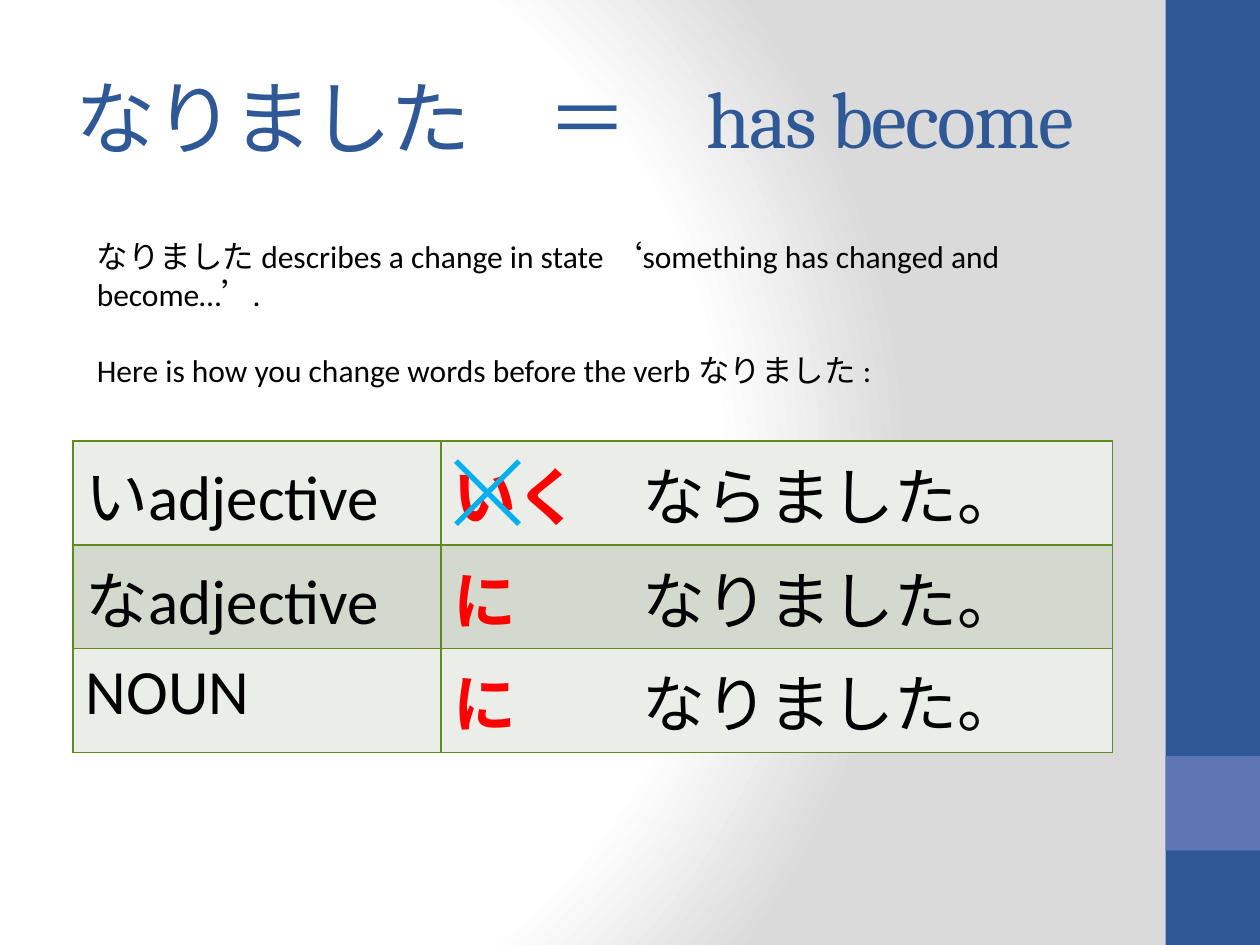
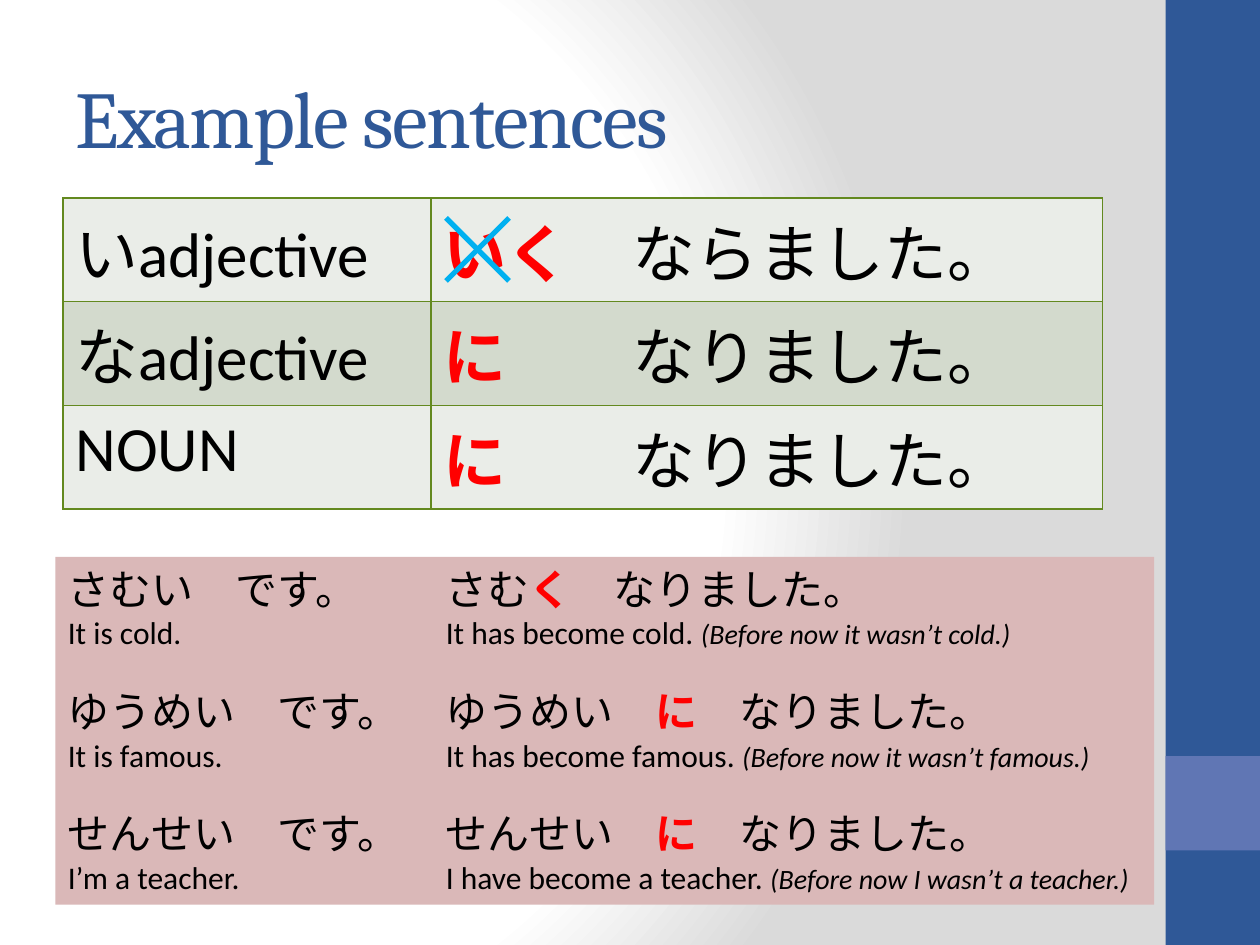
from lxml import etree
from pptx import Presentation
from pptx.dml.color import RGBColor
from pptx.enum import shapes, text
from pptx.oxml import parse_xml
from pptx.oxml.ns import nsdecls, qn
from pptx.util import Inches, Pt

BLUE, VIOLET, BLACK, RED, SKY = "2F5897", "6076B4", "000000", "FF0000", "00B0F0"
BORDER, PALE, SAGE, PINK = "63891F", "EAEDE8", "D3DACD", "DAB8B8"
HEAD_FONT, BODY_FONT = "Cambria", "Calibri"
TITLE_BOX = (0.5, 0.3, 8.33, 1.25)
COL_WIDTHS, ROW_HEIGHT = (2.92, 5.33), 0.82

RULES = [
    ("いadjective", "いく", "ならました。"),
    ("なadjective", "に", "なりました。"),
    ("NOUN", "に", "なりました。"),
]
INTRO = [
    "なりました describes a change in state ‘something has changed and become…’.",
    "Here is how you change words before the verb なりました :",
]
EXAMPLES = [
    ("さむい　です。", "さむ", "く", "It is cold.",
     "It has become cold. ", "(Before now it wasn’t cold.)"),
    ("ゆうめい　です。", "ゆうめい　", "に", "It is famous.",
     "It has become famous. ", "(Before now it wasn’t famous.)"),
    ("せんせい　です。", "せんせい　", "に", "I’m a teacher.",
     "I have become a teacher. ", "(Before now I wasn’t a teacher.)"),
]


def rgb(value):
    """Turn a hex string into a colour."""
    return RGBColor.from_string(value)


def set_font(font, size, color=BLACK, name=BODY_FONT):
    """Apply size, colour and typeface to a font."""
    font.size, font.name = Pt(size), name
    font.color.rgb = rgb(color)


def add_run(p, words, mark=False):
    """Add a run, bold and red when marked."""
    r = p.add_run()
    r.text = words
    if mark:
        r.font.bold = True
        r.font.color.rgb = rgb(RED)
    return r


def add_tab_stop(p, position):
    """Give a paragraph one left tab stop."""
    tabs = etree.SubElement(p._p.get_or_add_pPr(), qn("a:tabLst"))
    etree.SubElement(tabs, qn("a:tab"), pos=str(Inches(position)), algn="l")


def next_paragraph(tf, first):
    """Return the first paragraph of a frame or a new one."""
    return tf.paragraphs[0] if first else tf.add_paragraph()


def style_master(prs, slide):
    """Put the glow background and the side bands on the master."""
    master = prs.slide_master
    master.background.fill.gradient()
    old = master.element.find(".//" + qn("p:bgPr")).find(qn("a:gradFill"))
    stops = "".join(
        f'<a:gs pos="{pos * 1000}"><a:srgbClr val="{color}"/></a:gs>'
        for pos, color in ((0, "FFFFFF"), (75, "FFFFFF"), (100, "DADADA")))
    glow = parse_xml(
        f'<a:gradFill {nsdecls("a")} rotWithShape="1"><a:gsLst>{stops}</a:gsLst>'
        '<a:path path="circle"><a:fillToRect l="20000" t="50000" r="100000" b="50000"/>'
        '</a:path></a:gradFill>')
    old.getparent().replace(old, glow)
    for i, (top, height, color) in enumerate(((0, 7.5, BLUE), (6, 0.75, VIOLET))):
        sp = slide.shapes.add_shape(shapes.MSO_SHAPE.RECTANGLE, Inches(9.25), Inches(top),
                                    Inches(0.75), Inches(height))
        sp.shadow.inherit = False
        sp.fill.solid()
        sp.fill.fore_color.rgb = rgb(color)
        sp.line.fill.background()
        sp.element.nvSpPr.cNvPr.id = 20 + i
        master.element.cSld.spTree.insert(2 + i, sp.element)


def add_title(slide, words):
    """Fill and format the title placeholder."""
    sp = slide.shapes.title
    sp.left, sp.top, sp.width, sp.height = map(Inches, TITLE_BOX)
    tf = sp.text_frame
    tf.vertical_anchor = text.MSO_ANCHOR.MIDDLE
    tf.auto_size = text.MSO_AUTO_SIZE.NONE
    p = tf.paragraphs[0]
    p.alignment = text.PP_ALIGN.LEFT
    set_font(p.font, 46, BLUE, HEAD_FONT)
    add_run(p, words)._r.get_or_add_rPr().set("spc", "-100")


def style_cell(cell, fill):
    """Outline a cell on four sides and fill it."""
    tcPr = cell._tc.get_or_add_tcPr()
    for side in ("lnL", "lnR", "lnT", "lnB"):
        tcPr.append(parse_xml(
            f'<a:{side} {nsdecls("a")} w="{Pt(1)}"><a:solidFill>'
            f'<a:srgbClr val="{BORDER}"/></a:solidFill></a:{side}>'))
    cell.fill.solid()
    cell.fill.fore_color.rgb = rgb(fill)


def add_cross(slide, left, top, size=0.5):
    """Cross out a character with two diagonal lines."""
    for start, end in ((left, left + size), (left + size, left)):
        line = slide.shapes.add_connector(shapes.MSO_CONNECTOR.STRAIGHT, Inches(start),
                                          Inches(top), Inches(end), Inches(top + size))
        line.line.color.rgb = rgb(SKY)
        line.line.width = Pt(3)
        etree.SubElement(line.element.spPr, qn("a:effectLst"))


def add_rule_table(slide, left, top):
    """Draw the table of word endings with its crossed-out い."""
    table = slide.shapes.add_table(
        len(RULES), 2, Inches(left), Inches(top), Inches(sum(COL_WIDTHS)),
        Inches(ROW_HEIGHT * len(RULES))).table
    table.first_row = table.horz_banding = False
    for column, width in zip(table.columns, COL_WIDTHS):
        column.width = Inches(width)
    for i, (kind, ending, verb) in enumerate(RULES):
        table.rows[i].height = Inches(ROW_HEIGHT)
        for cell in table.rows[i].cells:
            style_cell(cell, SAGE if i % 2 else PALE)
        kind_p, verb_p = (c.text_frame.paragraphs[0] for c in table.rows[i].cells)
        add_tab_stop(verb_p, 1.5)
        for p in (kind_p, verb_p):
            set_font(p.font, 36)
        add_run(kind_p, kind)
        add_run(verb_p, ending, mark=True)
        add_run(verb_p, "\t" + verb)
    add_cross(slide, left + COL_WIDTHS[0] + 0.12, top + 0.16)


def add_text_box(slide, left, top, width, height):
    """Add a wrapping text box."""
    sp = slide.shapes.add_textbox(Inches(left), Inches(top), Inches(width), Inches(height))
    sp.text_frame.word_wrap = True
    return sp


def add_intro(slide, left, top, width, height):
    """Write the explanation above the table."""
    tf = add_text_box(slide, left, top, width, height).text_frame
    for i, words in enumerate(INTRO):
        p = next_paragraph(tf, i == 0)
        if i:
            p.space_before = Pt(22)
        set_font(p.font, 18)
        add_run(p, words)


def add_examples(slide, left, top, width, height):
    """Write the example pairs in a tinted box with two columns."""
    sp = add_text_box(slide, left, top, width, height)
    sp.fill.solid()
    sp.fill.fore_color.rgb = rgb(PINK)
    tf = sp.text_frame
    for i, (before, stem, ending, meaning, change, note) in enumerate(EXAMPLES):
        p = next_paragraph(tf, i == 0)
        if i:
            p.space_before = Pt(19.5)
        add_tab_stop(p, 3)
        set_font(p.font, 24)
        add_run(p, f"{before}\t{stem}")
        add_run(p, ending, mark=True)
        add_run(p, "　なりました。")
        p = tf.add_paragraph()
        add_tab_stop(p, 3)
        set_font(p.font, 18)
        add_run(p, f"{meaning}\t{change}")
        r = add_run(p, note)
        r.font.size, r.font.italic = Pt(16), True


def main():
    """Build both slides and save them."""
    prs = Presentation()
    prs.slide_width, prs.slide_height = Inches(10), Inches(7.5)
    layout = prs.slide_layouts.get_by_name("Title Only")

    s = prs.slides.add_slide(layout)
    style_master(prs, s)
    add_title(s, "なりました　＝　has become")
    add_rule_table(s, 0.58, 3.5)
    add_intro(s, 0.67, 1.83, 8.1, 1.31)

    s = prs.slides.add_slide(layout)
    add_title(s, "Example sentences")
    add_rule_table(s, 0.5, 1.57)
    add_examples(s, 0.44, 4.42, 8.72, 2.76)

    prs.save("out.pptx")


if __name__ == "__main__":
    main()
